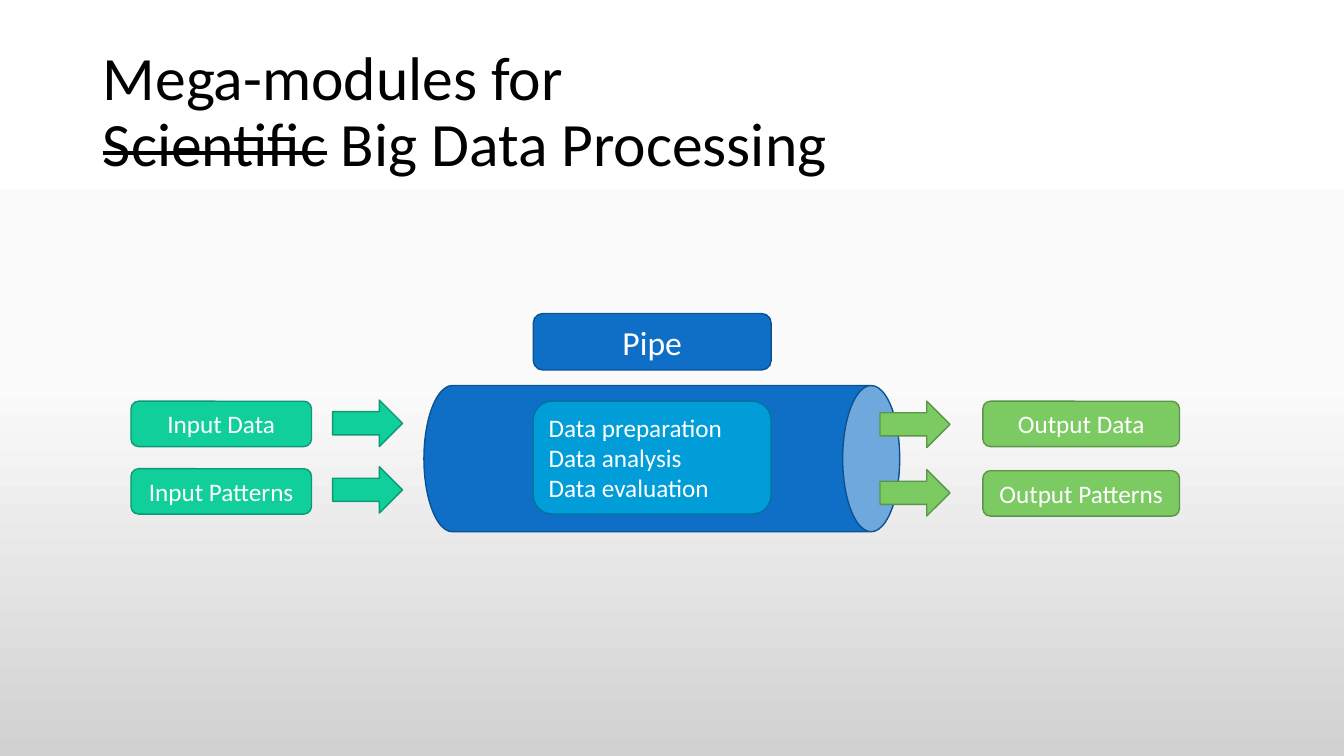
from copy import deepcopy
from dataclasses import dataclass

from pptx import Presentation
from pptx.dml.color import RGBColor
from pptx.enum.shapes import MSO_SHAPE as Preset
from pptx.enum.text import MSO_ANCHOR as Anchor, MSO_AUTO_SIZE as AutoSize, PP_ALIGN as Align
from pptx.shapes.autoshape import Shape
from pptx.slide import Slide
from pptx.util import Inches, Pt

SLIDE_WIDTH, SLIDE_HEIGHT = Inches(13.333), Inches(7.5)
FONT = "Calibri"
BLACK = RGBColor(0x00, 0x00, 0x00)
WHITE = RGBColor(0xFF, 0xFF, 0xFF)
OFF_WHITE = RGBColor(0xFB, 0xFB, 0xFB)
GRAY = RGBColor(0xD1, 0xD1, 0xD1)
BLUE = RGBColor(0x0F, 0x6F, 0xC6)
DARK_BLUE = RGBColor(0x0B, 0x52, 0x92)
CYAN = RGBColor(0x00, 0x9D, 0xD9)
DARK_CYAN = RGBColor(0x00, 0x74, 0xA1)
TEAL = RGBColor(0x10, 0xCF, 0x9B)
DARK_TEAL = RGBColor(0x0C, 0x99, 0x73)
GREEN = RGBColor(0x7C, 0xCA, 0x62)
DARK_GREEN = RGBColor(0x5C, 0x95, 0x49)


@dataclass(frozen=True)
class Box:
    """Position and size in percent of the slide's width and height."""

    left: float
    top: float
    width: float
    height: float

    def place(self, shape: Shape) -> None:
        shape.left = round(SLIDE_WIDTH * self.left / 100)
        shape.top = round(SLIDE_HEIGHT * self.top / 100)
        shape.width = round(SLIDE_WIDTH * self.width / 100)
        shape.height = round(SLIDE_HEIGHT * self.height / 100)


@dataclass(frozen=True)
class Paint:
    fill: RGBColor
    line: RGBColor


@dataclass(frozen=True)
class Flow:
    labels: tuple[str, str]
    paint: Paint
    label_left: float
    label_width: float
    label_tops: tuple[float, float]
    arrow_left: float
    arrow_tops: tuple[float, float]


PIPE_PAINT = Paint(BLUE, DARK_BLUE)
STEPS_PAINT = Paint(CYAN, DARK_CYAN)
INPUT = Flow(("Input Data", "Input Patterns"), Paint(TEAL, DARK_TEAL),
             9.75, 13.43, (53.07, 62), 24.75, (52.93, 61.73))
OUTPUT = Flow(("Output Data", "Output Patterns"), Paint(GREEN, DARK_GREEN),
              73.13, 14.63, (53.07, 62.27), 65.48, (53.07, 62.13))
LABEL_HEIGHT = 6
ARROW_WIDTH, ARROW_HEIGHT = 5.2, 6.13
CENTER_LEFT, CENTER_WIDTH = 39.68, 17.7


def paint_background(slide: Slide) -> None:
    fill = slide.background.fill
    fill.gradient()
    fill.gradient_angle = 270
    first_stop = slide.element.xpath(".//p:bg//a:gs")[0]
    first_stop.addnext(deepcopy(first_stop))
    stops = ((0, WHITE), (0.5, OFF_WHITE), (1, GRAY))
    for stop, (position, color) in zip(fill.gradient_stops, stops):
        stop.position = position
        stop.color.rgb = color


def write_title(slide: Slide) -> None:
    title = slide.shapes.title
    Box(6.9, 5.33, 86.25, 19.33).place(title)
    text_frame = title.text_frame
    text_frame.auto_size = AutoSize.NONE
    text_frame.vertical_anchor = Anchor.MIDDLE
    paragraph = text_frame.paragraphs[0]
    paragraph.text = "Mega-modules for \v"
    for text in ("Scientific", " Big Data Processing"):
        paragraph.add_run().text = text
    paragraph.alignment = Align.LEFT
    paragraph.line_spacing = 0.9
    for run in paragraph.runs:
        run.font.name = FONT
        run.font.size = Pt(44)
        run.font.color.rgb = BLACK
    struck_run = title.element.xpath('.//a:r[a:t="Scientific"]/a:rPr')[0]
    struck_run.set("strike", "sngStrike")


def add_preset(slide: Slide, preset: Preset, box: Box, paint: Paint) -> Shape:
    shape = slide.shapes.add_shape(preset, 0, 0, 0, 0)
    box.place(shape)
    shape.shadow.inherit = False
    shape.fill.solid()
    shape.fill.fore_color.rgb = paint.fill
    shape.line.color.rgb = paint.line
    shape.line.width = Pt(1)
    return shape


def add_label(slide: Slide, text: str, box: Box, paint: Paint,
              size: int = 18, alignment: Align = Align.CENTER) -> None:
    shape = add_preset(slide, Preset.ROUNDED_RECTANGLE, box, paint)
    text_frame = shape.text_frame
    text_frame.text = text
    text_frame.word_wrap = True
    text_frame.auto_size = AutoSize.SHAPE_TO_FIT_TEXT
    text_frame.vertical_anchor = Anchor.MIDDLE
    for paragraph in text_frame.paragraphs:
        paragraph.alignment = alignment
        for run in paragraph.runs:
            run.font.name = FONT
            run.font.size = Pt(size)
            run.font.color.rgb = WHITE


def add_flow(slide: Slide, flow: Flow) -> None:
    for top in flow.arrow_tops:
        add_preset(slide, Preset.RIGHT_ARROW,
                   Box(flow.arrow_left, top, ARROW_WIDTH, ARROW_HEIGHT), flow.paint)
    for text, top in zip(flow.labels, flow.label_tops):
        add_label(slide, text, Box(flow.label_left, top, flow.label_width, LABEL_HEIGHT),
                  flow.paint)


def main() -> None:
    presentation = Presentation()
    presentation.slide_width, presentation.slide_height = SLIDE_WIDTH, SLIDE_HEIGHT
    slide = presentation.slides.add_slide(presentation.slide_layouts.get_by_name("Title Only"))
    paint_background(slide)
    write_title(slide)
    pipe = add_preset(slide, Preset.CAN, Box(43.8, 29.2, 10.88, 62.93), PIPE_PAINT)
    pipe.rotation = 90
    pipe.adjustments[0] = 0.39
    add_label(slide, "Pipe", Box(CENTER_LEFT, 41.47, CENTER_WIDTH, 7.47), PIPE_PAINT, size=24)
    add_flow(slide, INPUT)
    add_label(slide, "Data preparation\nData analysis\nData evaluation",
              Box(CENTER_LEFT, 53.07, CENTER_WIDTH, 14.93), STEPS_PAINT, alignment=Align.LEFT)
    add_flow(slide, OUTPUT)
    presentation.save("out.pptx")


if __name__ == "__main__":
    main()
